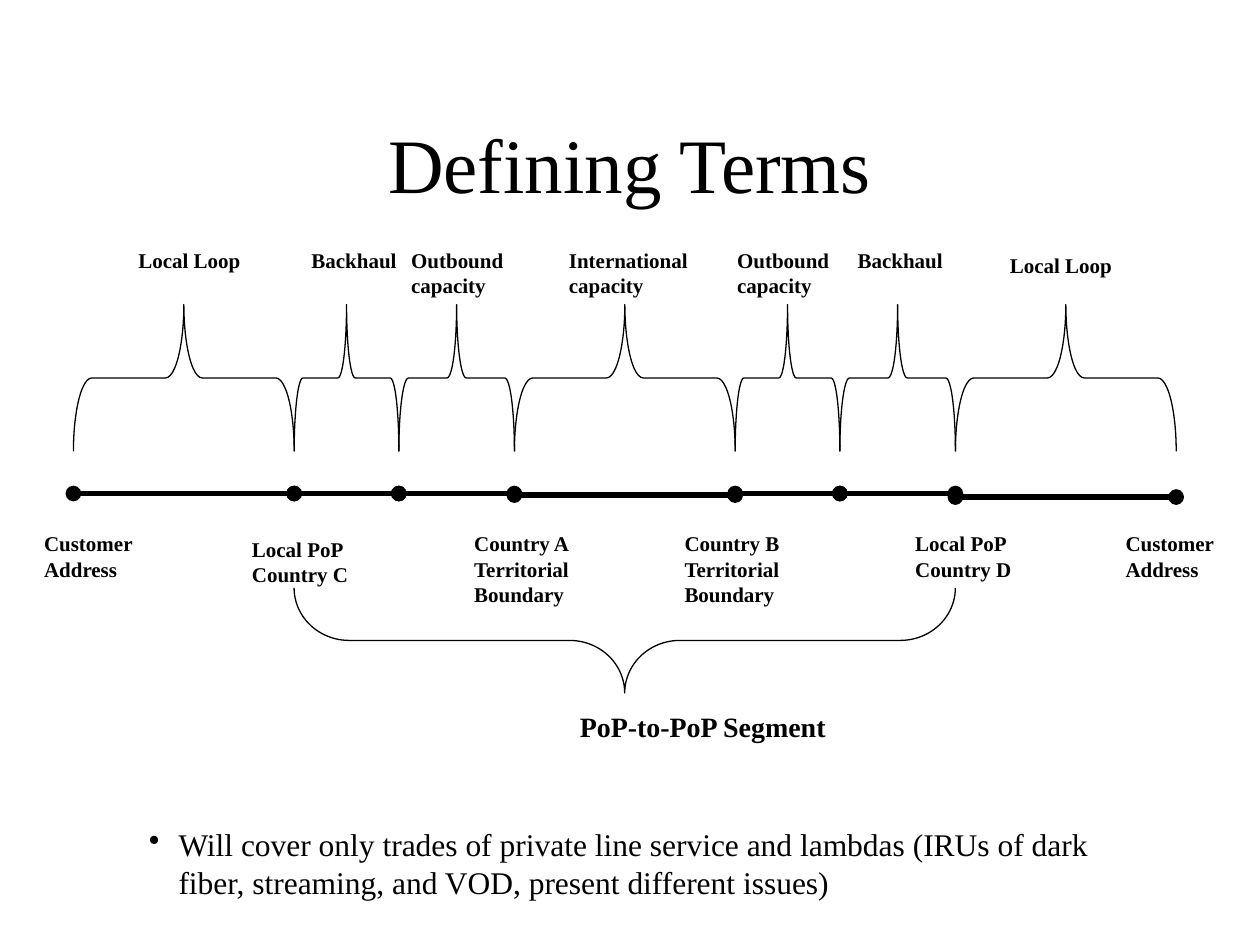
from dataclasses import dataclass
from itertools import pairwise

import lxml.etree
import pptx
import pptx.dml.color
import pptx.enum.shapes
import pptx.enum.text
import pptx.oxml.ns
import pptx.util
from pptx.util import Cm

COLORS = {"ink": "000000", "background": "FFFFFF"}
FONT = "Times New Roman"
ALIGN = pptx.enum.text.PP_ALIGN
ANCHOR = pptx.enum.text.MSO_ANCHOR


@dataclass
class Label:
    text: str
    left: float
    top: float
    width: float
    height: float = 1.27


# All positions are in centimetres
NODES = [1.48, 5.93, 8.04, 10.37, 14.82, 16.93, 19.26, 23.71]
LINE_TOPS = [9.95, 9.95, 9.95, 9.98, 9.95, 9.95, 10.02]
SEGMENT_TOP, PLACE_TOP = 4.87, 10.58

SEGMENT_LABELS = [
    Label("Local Loop", 2.54, SEGMENT_TOP, 2.9),
    Label("Backhaul", 6.03, SEGMENT_TOP, 2.4),
    Label("Outbound capacity", 8.04, SEGMENT_TOP, 2.74),
    Label("International capacity", 11.22, SEGMENT_TOP, 3.18),
    Label("Outbound capacity", 14.61, SEGMENT_TOP, 2.74),
    Label("Backhaul", 17.04, SEGMENT_TOP, 2.4),
    Label("Local Loop", 20.11, 4.97, 2.9),
]
PLACE_LABELS = [
    Label("Customer Address", 0.64, PLACE_TOP, 2.34),
    Label("Local PoP\nCountry C", 4.83, 10.69, 2.7),
    Label("Country A Territorial Boundary", 9.31, PLACE_TOP, 2.79, 1.78),
    Label("Country B Territorial Boundary", 13.55, PLACE_TOP, 2.79, 1.78),
    Label("Local PoP\nCountry D", 18.2, PLACE_TOP, 2.7),
    Label("Customer Address", 22.44, PLACE_TOP, 2.36),
]


def color(name: str) -> pptx.dml.color.RGBColor:
    return pptx.dml.color.RGBColor.from_string(COLORS[name])


def add_text(slide, label: Label, *, size: float = 12, bold: bool = True,
             align=ALIGN.LEFT, anchor=ANCHOR.TOP, bullet: str = "") -> None:
    box = slide.shapes.add_textbox(Cm(label.left), Cm(label.top),
                                   Cm(label.width), Cm(label.height))
    frame = box.text_frame
    frame.word_wrap = True
    frame.vertical_anchor = anchor
    frame.text = label.text
    for paragraph in frame.paragraphs:
        paragraph.alignment = align
        for run in paragraph.runs:
            run.font.name = FONT
            run.font.size = pptx.util.Pt(size)
            run.font.bold = bold
            run.font.color.rgb = color("ink")
        if bullet:
            properties = paragraph._p.get_or_add_pPr()
            properties.set("marL", str(Cm(0.6)))
            properties.set("indent", str(-Cm(0.6)))
            mark = lxml.etree.SubElement(properties, pptx.oxml.ns.qn("a:buChar"))
            mark.set("char", bullet)


def add_link(slide, start: float, end: float, top: float) -> None:
    """Draw a heavy line with a dot at each end."""
    link = slide.shapes.add_connector(
        pptx.enum.shapes.MSO_CONNECTOR.STRAIGHT, Cm(start), Cm(top), Cm(end), Cm(top))
    link.line.color.rgb = color("ink")
    link.line.width = pptx.util.Pt(3)
    line = link.line._get_or_add_ln()
    for end_tag in ("a:headEnd", "a:tailEnd"):
        lxml.etree.SubElement(line, pptx.oxml.ns.qn(end_tag)).set("type", "oval")
    lxml.etree.SubElement(link._element.spPr, pptx.oxml.ns.qn("a:effectLst"))


def add_brace(slide, start: float, end: float, top: float, depth: float,
              rotation: float) -> None:
    """Lay a left brace on its side so that it spans start to end."""
    span = end - start
    brace = slide.shapes.add_shape(
        pptx.enum.shapes.MSO_SHAPE.LEFT_BRACE,
        Cm((start + end - depth) / 2), Cm(top + (depth - span) / 2),
        Cm(depth), Cm(span))
    brace.rotation = rotation
    brace.adjustments[0] = span / 12 / min(span, depth)
    brace.shadow.inherit = False
    brace.fill.background()
    brace.line.color.rgb = color("ink")
    brace.line.width = pptx.util.Pt(0.75)


def main() -> None:
    deck = pptx.Presentation()
    deck.slide_width, deck.slide_height = Cm(25.4), Cm(19.05)
    slide = deck.slides.add_slide(deck.slide_layouts[6])
    slide.background.fill.solid()
    slide.background.fill.fore_color.rgb = color("background")

    # Title
    add_text(slide, Label("Defining Terms", 1.9, 1.7, 21.59, 3.17), size=44,
             bold=False, align=ALIGN.CENTER, anchor=ANCHOR.MIDDLE)

    # Circuit from customer to customer, with a brace over each segment
    for (start, end), top in zip(pairwise(NODES), LINE_TOPS):
        add_link(slide, start, end, top)
        add_brace(slide, start, end, top=6.14, depth=2.96, rotation=90)

    # Segment and place names
    for label in SEGMENT_LABELS + PLACE_LABELS:
        add_text(slide, label)

    # PoP-to-PoP span
    add_brace(slide, NODES[1], NODES[-2], top=11.85, depth=2.12, rotation=270)
    add_text(slide, Label("PoP-to-PoP Segment", 11.44, 14.18, 5.8, 0.94), size=16)

    # Scope note
    add_text(slide, Label("Will cover only trades of private line service and lambdas "
                          "(IRUs of dark fiber, streaming, and VOD, present different "
                          "issues)", 2.75, 16.51, 19.94, 1.78),
             size=18, bold=False, bullet="•")

    deck.save("out.pptx")


if __name__ == "__main__":
    main()
